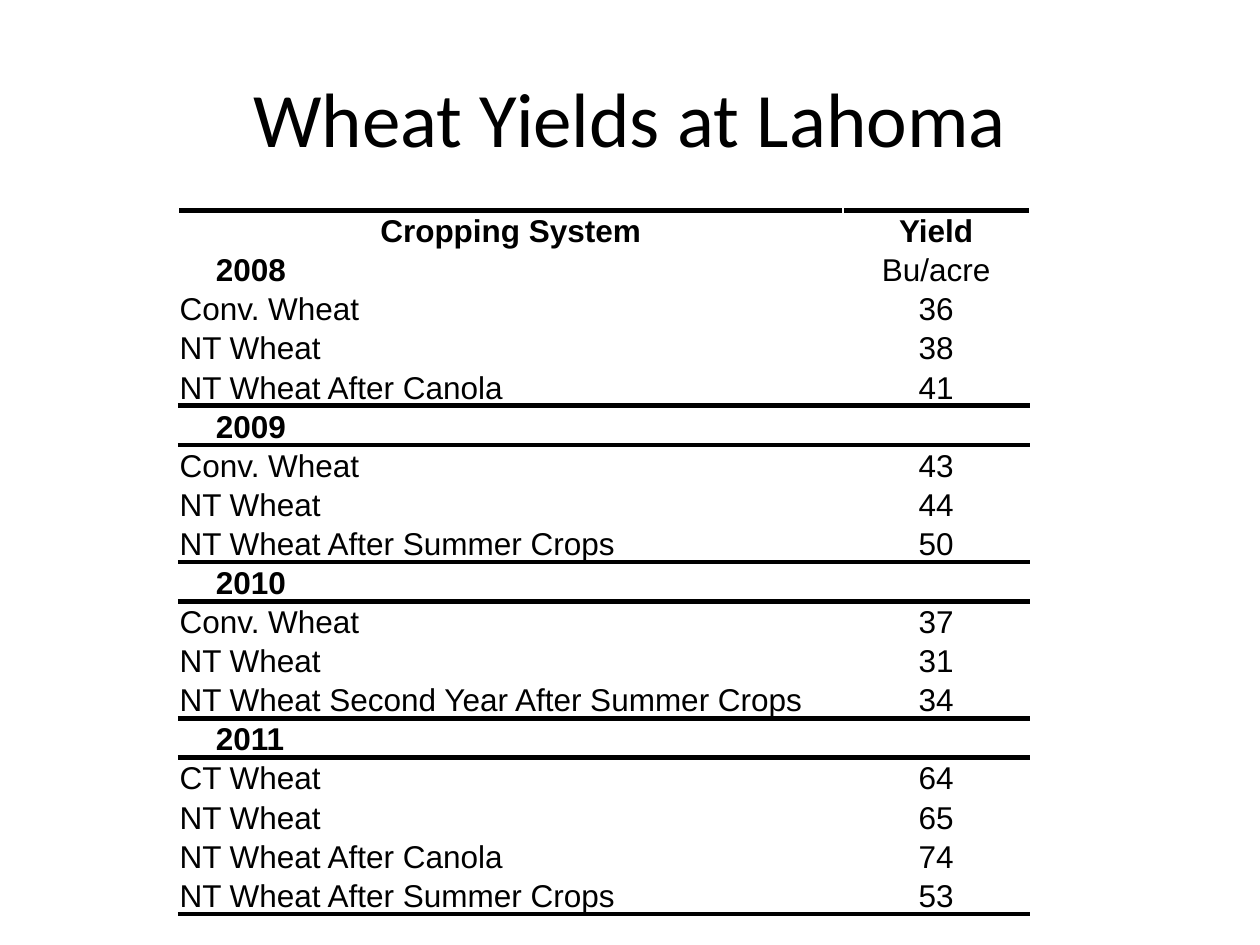
from lxml.etree import SubElement
from pptx import Presentation
from pptx.dml.color import RGBColor
from pptx.enum.text import MSO_ANCHOR, PP_ALIGN
from pptx.oxml.ns import qn
from pptx.util import Cm, Pt

BLACK = RGBColor(0x00, 0x00, 0x00)
RULE_WIDTH = Pt(3)
YEAR_INDENT = 0.73

HEADER = ("Cropping System", "Yield")
UNIT = "Bu/acre"
YIELDS = {
    "2008": [("Conv. Wheat", 36), ("NT Wheat", 38), ("NT Wheat After Canola", 41)],
    "2009": [("Conv. Wheat", 43), ("NT Wheat", 44), ("NT Wheat After Summer Crops", 50)],
    "2010": [("Conv. Wheat", 37), ("NT Wheat", 31),
             ("NT Wheat Second Year After Summer Crops", 34)],
    "2011": [("CT Wheat", 64), ("NT Wheat", 65), ("NT Wheat After Canola", 74),
             ("NT Wheat After Summer Crops", 53)],
}


def set_attributes(target, values):
    for name, value in values.items():
        setattr(target, name, value)


def write(paragraph, text, size, font_name, bold=False, alignment=PP_ALIGN.CENTER):
    paragraph.alignment = alignment
    run = paragraph.add_run()
    run.text = text
    set_attributes(run.font, {"size": Pt(size), "name": font_name, "bold": bold})
    run.font.color.rgb = BLACK


def add_rule(cell, tag):
    """Draw one cell edge; the top edge must be added before the bottom one."""
    properties = cell._tc.get_or_add_tcPr()
    line = SubElement(properties, qn(tag), w=str(RULE_WIDTH))
    fill = SubElement(line, qn("a:solidFill"))
    SubElement(fill, qn("a:srgbClr"), val=str(BLACK))


def add_title(slide, left, top, width, height):
    text_frame = slide.shapes.add_textbox(
        Cm(left), Cm(top), Cm(width), Cm(height)).text_frame
    set_attributes(text_frame, {"word_wrap": True, "vertical_anchor": MSO_ANCHOR.MIDDLE})
    write(text_frame.paragraphs[0], "Wheat Yields at Lahoma", 44, "Calibri")


def list_rows():
    """Return the rows as (texts, bold flags, left indent)."""
    rows = [(HEADER, (True, True), 0)]
    for index, (year, systems) in enumerate(YIELDS.items()):
        rows.append(((year, "" if index else UNIT), (True, False), YEAR_INDENT))
        rows += [((system, str(value)), (False, False), 0) for system, value in systems]
    return rows


def add_yield_table(slide, left, top, width, height):
    rows = list_rows()
    table = slide.shapes.add_table(
        len(rows), 2, Cm(left), Cm(top), Cm(width), Cm(height)).table
    set_attributes(table, {"first_row": False, "horz_banding": False})
    yield_width = 3.76
    table.columns[0].width = Cm(width - yield_width)
    table.columns[1].width = Cm(yield_width)

    for row_index, (texts, bolds, indent) in enumerate(rows):
        table.rows[row_index].height = Cm(height / len(rows))
        last = row_index == len(rows) - 1
        # Heavy rules open the table, close it and separate the years
        rule_above = row_index == 0 or (indent and row_index > 1)
        rule_below = last or (row_index > 0 and rows[row_index + 1][2])
        for column, (text, bold) in enumerate(zip(texts, bolds)):
            cell = table.cell(row_index, column)
            set_attributes(cell, {
                "margin_left": Cm(0.02 + (0 if column else indent)),
                "margin_right": Cm(0.02),
                "margin_top": Cm(0.02),
                "margin_bottom": 0,
                "vertical_anchor": MSO_ANCHOR.BOTTOM,
            })
            if rule_above:
                add_rule(cell, "a:lnT")
            if rule_below:
                add_rule(cell, "a:lnB")
            cell.fill.background()
            centred = column == 1 or row_index == 0
            write(cell.text_frame.paragraphs[0], text, 18, "Arial", bold,
                  PP_ALIGN.CENTER if centred else PP_ALIGN.LEFT)


def main():
    presentation = Presentation()
    presentation.slide_width, presentation.slide_height = Cm(25.4), Cm(19.05)
    slide = presentation.slides.add_slide(presentation.slide_layouts[6])
    add_title(slide, 1.27, 0.76, 22.86, 3.18)
    add_yield_table(slide, 3.6, 4.24, 17.15, 14.2)
    presentation.save("out.pptx")


if __name__ == "__main__":
    main()
